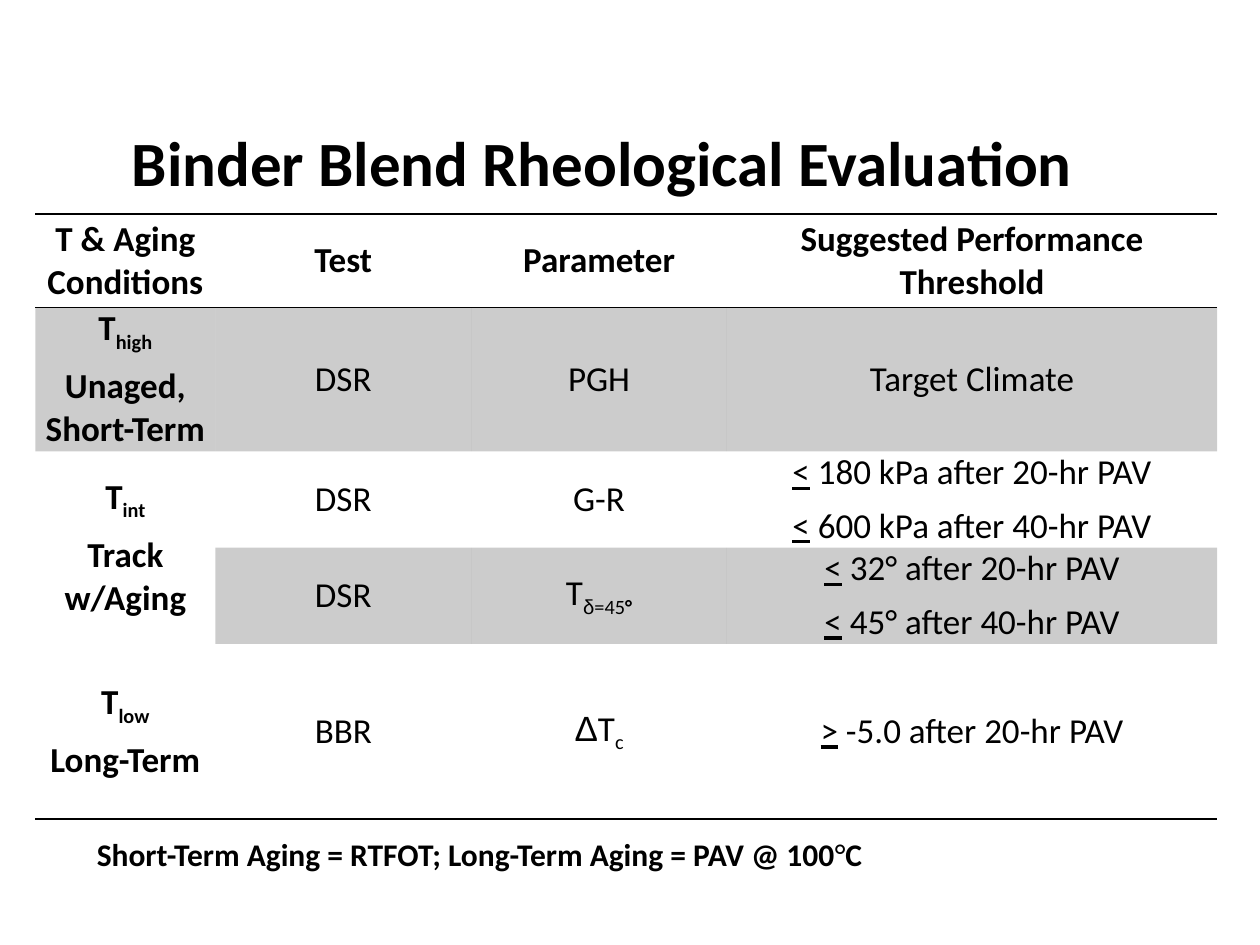
from dataclasses import dataclass
from lxml import etree
from pptx import Presentation, util as u
from pptx.dml.color import RGBColor
from pptx.enum import text
from pptx.oxml.ns import qn

WIDTH = u.Inches(10)
UNIT = WIDTH // 100
INK = "000000"
PLAIN = "{2D5ABB26-0587-4C30-8999-92F81FD0307C}"


@dataclass
class Run:
    text: str
    bold: bool = False
    sub: bool = False
    under: bool = False
    font: str = "Calibri"


@dataclass
class Cell:
    paras: list
    shade: bool = False
    top: bool = False
    base: bool = False


def grid(n: float) -> int:
    return round(n * UNIT)


def place(shape, left: float, top: float, wide: float, high: float) -> None:
    shape.left, shape.top = grid(left), grid(top)
    shape.width, shape.height = grid(wide), grid(high)


def color(hue: str) -> RGBColor:
    return RGBColor.from_string(hue)


def write(para, runs: list, size: float) -> None:
    for item in runs:
        run = para.add_run()
        run.text = item.text
        font = run.font
        font.size, font.name, font.bold = u.Pt(size), item.font, item.bold
        font.color.rgb = color(INK)
        if item.under:
            font.underline = True
        if item.sub:
            font._element.set("baseline", "-25000")


def rule(props, tag: str) -> None:
    line = etree.Element(qn(tag), w=str(u.Pt(1)))
    fill = etree.SubElement(line, qn("a:solidFill"))
    etree.SubElement(fill, qn("a:srgbClr"), val=INK)
    props.insert(0, line)


def draw(spot, cell: Cell) -> None:
    spot.margin_left = spot.margin_right = 0
    spot.margin_top = spot.margin_bottom = 0
    spot.vertical_anchor = text.MSO_ANCHOR.MIDDLE
    frame = spot.text_frame
    for i, runs in enumerate(cell.paras):
        para = frame.add_paragraph() if i else frame.paragraphs[0]
        para.alignment = text.PP_ALIGN.CENTER
        para.space_after = u.Pt(6)
        write(para, runs, 20)
    props = spot._tc.get_or_add_tcPr()
    if cell.shade:
        spot.fill.solid()
        spot.fill.fore_color.rgb = color(INK)
        tint = props.find(".//" + qn("a:srgbClr"))
        etree.SubElement(tint, qn("a:alpha"), val="20000")
    else:
        spot.fill.background()
    if cell.base:
        rule(props, "a:lnB")
    if cell.top:
        rule(props, "a:lnT")


def head(name: str) -> Cell:
    return Cell([[Run(name, True)]], top=True, base=True)


def stage(mark: str, note: str, **look) -> Cell:
    return Cell([[Run("T", True), Run(mark, True, True)], [Run(note, True)]], **look)


def word(name: str, **look) -> Cell:
    return Cell([[Run(name)]], **look)


def limit(*marks: str, **look) -> Cell:
    return Cell([[Run(m[0], under=True), Run(m[1:])] for m in marks], **look)


COLS = [14.3, 20.3, 20.3, 38.9]
ROWS = [7.4, 6.9, 6.9, 6.9, 13.9]
ANGLE = [Run("T"), Run("δ", sub=True, font="Arial"),
         Run("=45", sub=True), Run("°", True, True)]
DELTA = [Run("Δ", font="Arial"), Run("T"), Run("c", sub=True)]
CELLS = [
    [head("T & Aging Conditions"), head("Test"), head("Parameter"),
     head("Suggested Performance Threshold")],
    [stage("high", "Unaged, Short-Term", shade=True), word("DSR", shade=True),
     word("PGH", shade=True), word("Target Climate", shade=True)],
    [stage("int", "Track w/Aging"), word("DSR"), word("G-R"),
     limit("< 180 kPa after 20-hr PAV", "< 600 kPa after 40-hr PAV")],
    [None, word("DSR", shade=True), Cell([ANGLE], shade=True),
     limit("< 32° after 20-hr PAV", "< 45° after 40-hr PAV", shade=True)],
    [stage("low", "Long-Term", base=True), word("BBR", base=True),
     Cell([DELTA], base=True), limit("> -5.0 after 20-hr PAV", base=True)],
]


def main() -> None:
    deck = Presentation()
    deck.slide_width, deck.slide_height = WIDTH, u.Inches(7.5)
    slide = deck.slides.add_slide(deck.slide_layouts[5])

    title = slide.shapes.title
    place(title, 2.8, 8.3, 90, 9)
    title.text_frame.vertical_anchor = text.MSO_ANCHOR.MIDDLE
    para = title.text_frame.paragraphs[0]
    para.alignment = text.PP_ALIGN.CENTER
    write(para, [Run("Binder Blend Rheological Evaluation", True)], 36)

    frame = slide.shapes.add_table(len(ROWS), len(COLS), 0, 0, WIDTH, WIDTH)
    table = frame.table
    table.first_row = table.horz_banding = False
    table._tbl.tblPr.find(qn("a:tableStyleId")).text = PLAIN
    for col, wide in zip(table.columns, COLS):
        col.width = grid(wide)
    for row, high in zip(table.rows, ROWS):
        row.height = grid(high)
    place(frame, 2.8, 17, sum(COLS), 47.1)
    table.cell(2, 0).merge(table.cell(3, 0))
    for r, line in enumerate(CELLS):
        for c, cell in enumerate(line):
            if cell:
                draw(table.cell(r, c), cell)

    note = slide.shapes.add_textbox(0, 0, 0, 0)
    place(note, 6.7, 65.8, 80, 4)
    note.text_frame.word_wrap = True
    note.text_frame.auto_size = text.MSO_AUTO_SIZE.SHAPE_TO_FIT_TEXT
    write(note.text_frame.paragraphs[0], [
        Run("Short-Term Aging = RTFOT; Long-Term Aging = PAV @ 100", True),
        Run("°"), Run("C", True)], 18)

    deck.save("out.pptx")


if __name__ == "__main__":
    main()
